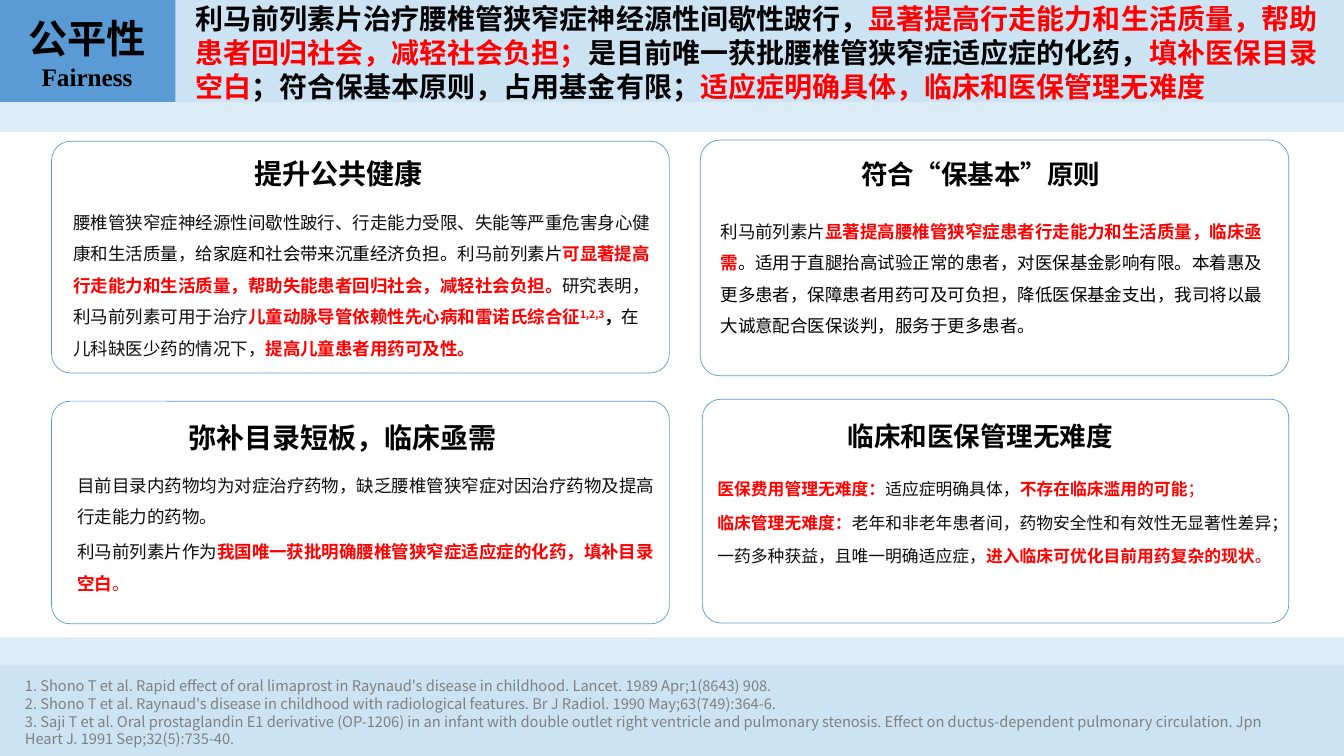
from pptx import Presentation
from pptx.dml.color import RGBColor
from pptx.enum.shapes import MSO_SHAPE
from pptx.enum.text import MSO_ANCHOR, MSO_AUTO_SIZE, PP_ALIGN
from pptx.oxml import parse_xml
from pptx.oxml.ns import nsdecls
from pptx.util import Cm, Pt

SANS = "Noto Sans CJK SC"
SERIF = "Times New Roman"
BLUE = "5B9BD5"
WIDTH, HEIGHT = 33.87, 19.05

# Run styles: colour, bold, baseline in thousandths of a percent
DARK = ("0D0D0D", False, 0)
BLACK = ("000000", False, 0)
STRONG = ("000000", True, 0)
RED = ("FF0000", True, 0)
RED_LIGHT = ("FF0000", False, 0)
RED_SUPER = ("FF0000", True, 30000)
GREY = ("808080", False, 0)

HEADLINE = [[
    ("利马前列素片治疗腰椎管狭窄症神经源性间歇性跛行，", STRONG),
    ("显著提高行走能力和生活质量，帮助患者回归社会，减轻社会负担；", RED),
    ("是目前唯一获批腰椎管狭窄症适应症的化药，", STRONG),
    ("填补医保目录空白", RED),
    ("；符合保基本原则，占用基金有限；", STRONG),
    ("适应症明确具体，临床和医保管理无难度", RED),
]]

# Heading and body boxes are relative to the top left of their panel.
PANELS = [
    dict(box=(1.3, 3.56, 15.57, 5.84),
         heading="提升公共健康", heading_size=20, heading_box=(4.87, 0.25, 7.16, 1.12),
         body_size=12.5, body_box=(0.3, 1.39, 15.11, 4.17),
         body=[[
             ("腰椎管狭窄症神经源性间歇性跛行、行走能力受限、失能等严重危害身心健康和生活质量，给", DARK),
             ("家庭和社会带来沉重经济负担。", BLACK),
             ("利马前列素片", DARK),
             ("可显著提高行走能力和生活质量，帮助失能患者回归社会，减轻社会负担。", RED),
             ("研究表明，利马前列素可用于治疗", DARK),
             ("儿童动脉导管依赖性先心病和雷诺氏综合征", RED),
             ("1,2,3", RED_SUPER),
             ("，", STRONG),
             ("在", BLACK),
             ("儿科缺医少药的情况下，", DARK),
             ("提高儿童患者用药可及性。", RED),
         ]]),
    dict(box=(17.65, 3.53, 14.83, 5.94),
         heading="符合“保基本”原则", heading_size=19, heading_box=(3.81, 0.33, 7.11, 1.07),
         body_size=12.5, body_box=(0.26, 1.65, 14.38, 3.45),
         body=[[
             ("利马前列素片", DARK),
             ("显著提高腰椎管狭窄症患者行走能力和生活质量，临床亟需", RED),
             ("。适用于直腿抬高试验正常的患者，对医保基金影响有限。本着惠及更多患者，"
              "保障患者用药可及可负担，降低医保基金支出，我司将以最大诚意配合医保谈判，"
              "服务于更多患者。", BLACK),
         ]]),
    dict(box=(1.3, 10.11, 15.57, 5.61),
         heading="弥补目录短板，临床亟需", heading_size=20, heading_box=(3.2, 0.35, 9.35, 1.12),
         body_size=12.5, body_box=(0.4, 1.47, 15.14, 3.58),
         body=[
             [("目前目录内药物均为对症治疗药物，缺乏腰椎管狭窄症对因治疗药物及提高行走能力的药物。", DARK)],
             [("利马前列素片作为", DARK),
              ("我国唯一获批明确腰椎管狭窄症适应症的化药，填补目录空白", RED),
              ("。", RED_LIGHT)],
         ]),
    dict(box=(17.7, 10.06, 14.78, 5.64),
         heading="临床和医保管理无难度", heading_size=19, heading_box=(3.41, 0.4, 7.34, 1.07),
         body_size=12, body_box=(0.13, 1.62, 15.16, 2.77),
         body=[
             [("医保费用管理无难度：", RED), ("适应症明确具体，", DARK),
              ("不存在临床滥用的可能", RED), ("；", RED_LIGHT)],
             [("临床管理无难度：", RED),
              ("老年和非老年患者间，药物安全性和有效性无显著性差异；", DARK)],
             [("一药多种获益，且唯一明确适应症，", DARK),
              ("进入临床可优化目前用药复杂的现状", RED), ("。", RED_LIGHT)],
         ]),
]

REFERENCES = [
    "1. Shono T et al. Rapid effect of oral limaprost in Raynaud's disease in childhood. "
    "Lancet. 1989 Apr;1(8643) 908.",
    "2. Shono T et al. Raynaud's disease in childhood with radiological features. "
    "Br J Radiol. 1990 May;63(749):364-6.",
    "3. Saji T et al. Oral prostaglandin E1 derivative (OP-1206) in an infant with double outlet "
    "right ventricle and pulmonary stenosis. Effect on ductus-dependent pulmonary circulation. "
    "Jpn Heart J. 1991 Sep;32(5):735-40.",
]


def rgb(value):
    return RGBColor.from_string(value)


def add_run(paragraph, text, style, size, typeface=SANS):
    colour, bold, baseline = style
    run = paragraph.add_run()
    run.text = text
    run.font.color.rgb = rgb(colour)
    for name, value in dict(size=Pt(size), bold=bold, name=typeface).items():
        setattr(run.font, name, value)
    properties = run._r.get_or_add_rPr()
    properties.append(parse_xml(f'<a:ea {nsdecls("a")} typeface="{typeface}"/>'))
    if baseline:
        properties.set("baseline", str(baseline))


def write(frame, paragraphs, size, gap=0, **paragraph_format):
    """Fill a text frame; each paragraph is a list of (text, style) runs."""
    for name, value in dict(word_wrap=True, auto_size=MSO_AUTO_SIZE.NONE,
                            vertical_anchor=MSO_ANCHOR.TOP).items():
        setattr(frame, name, value)
    for index, runs in enumerate(paragraphs):
        paragraph = frame.add_paragraph() if index else frame.paragraphs[0]
        paragraph.space_before = Pt(gap if index else 0)
        for name, value in paragraph_format.items():
            setattr(paragraph, name, value)
        for text, style in runs:
            add_run(paragraph, text, style, size)


def add_text(slide, box, paragraphs, size, **options):
    frame = slide.shapes.add_textbox(*map(Cm, box)).text_frame
    write(frame, paragraphs, size, **options)
    return frame


def add_block(slide, box, fill):
    block = slide.shapes.add_shape(MSO_SHAPE.RECTANGLE, *map(Cm, box))
    block.shadow.inherit = False
    block.fill.solid()
    block.fill.fore_color.rgb = rgb(fill)
    block.line.fill.background()


def add_backdrop(slide):
    slide.background.fill.solid()
    slide.background.fill.fore_color.rgb = rgb("CCE3F3")
    add_block(slide, (0, 2.57, WIDTH, 14.2), "DCECF7")
    add_block(slide, (0, 3.33, WIDTH, 12.73), "FFFFFF")


def add_topic_tag(slide, box):
    left, top, width, height = box
    add_block(slide, box, BLUE)
    frame = add_text(slide, (left + 0.38, top + 0.23, width - 0.79, height - 0.33),
                     [[("公平性", STRONG)]], 28, alignment=PP_ALIGN.CENTER)
    english = frame.add_paragraph()
    english.alignment = PP_ALIGN.CENTER
    add_run(english, "Fairness", STRONG, 18, SERIF)


def place_headline(slide, box):
    title = slide.shapes.title
    for name, value in zip(("left", "top", "width", "height"), box):
        setattr(title, name, Cm(value))
    write(title.text_frame, HEADLINE, 20,
          alignment=PP_ALIGN.LEFT, line_spacing=Pt(24))


def add_panel(slide, box, heading, heading_size, heading_box, body, body_size, body_box):
    left, top, _, _ = box
    frame = slide.shapes.add_shape(MSO_SHAPE.ROUNDED_RECTANGLE, *map(Cm, box))
    frame.adjustments[0] = 0.083
    frame.shadow.inherit = False
    frame.fill.background()
    frame.line.color.rgb = rgb(BLUE)
    frame.line.width = Pt(0.5)

    def inside(part):
        dx, dy, width, height = part
        return left + dx, top + dy, width, height

    add_text(slide, inside(heading_box), [[(heading, STRONG)]], heading_size)
    add_text(slide, inside(body_box), body, body_size, gap=2.5, line_spacing=1.5)


def add_references(slide, box):
    add_text(slide, box, [[(reference, GREY)] for reference in REFERENCES], 10.5)


def main():
    presentation = Presentation()
    presentation.slide_width, presentation.slide_height = Cm(WIDTH), Cm(HEIGHT)
    slide = presentation.slides.add_slide(presentation.slide_layouts[5])
    add_backdrop(slide)
    add_topic_tag(slide, (0, 0, 4.42, 2.57))
    place_headline(slide, (4.67, -0.08, 29, 2.69))
    for panel in PANELS:
        add_panel(slide, **panel)
    add_references(slide, (0.38, 16.94, 32.36, 2.06))
    presentation.save("out.pptx")


if __name__ == "__main__":
    main()
